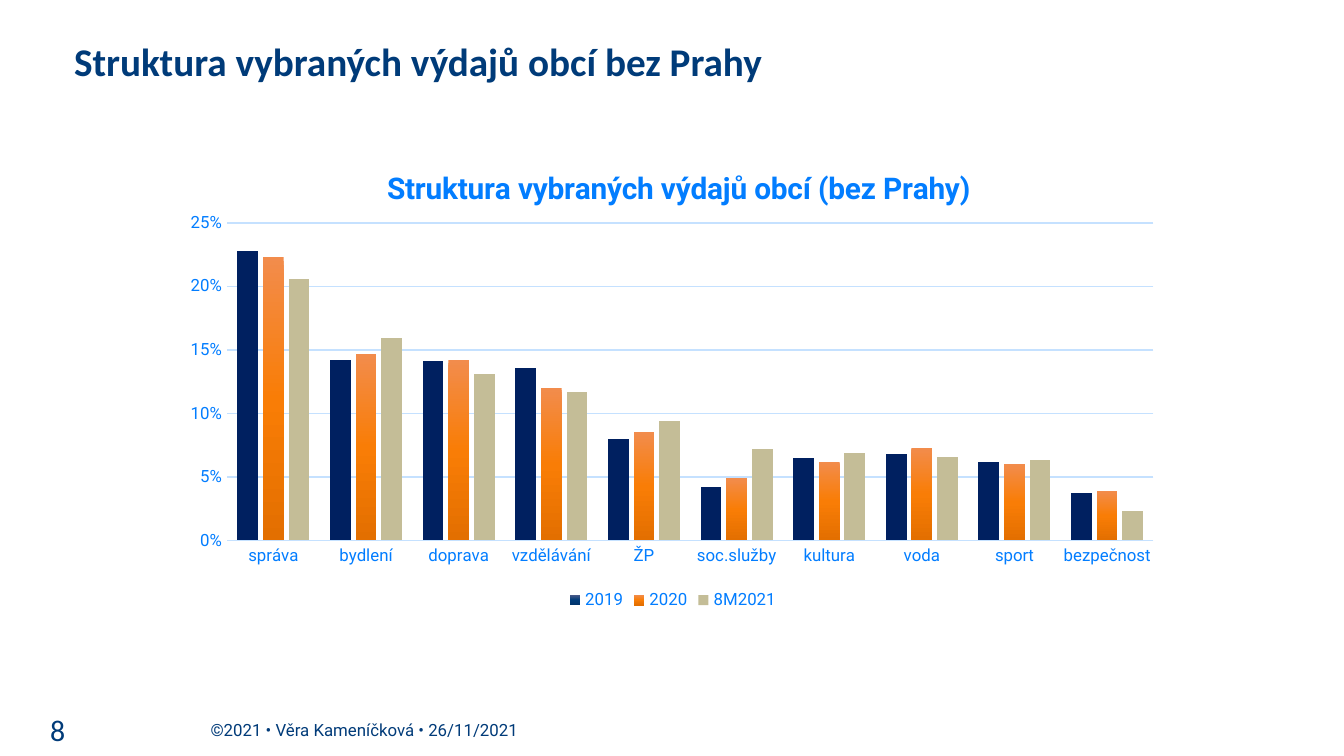
from copy import deepcopy
from dataclasses import dataclass

from pptx import Presentation
from pptx import util as u
from pptx.chart.data import CategoryChartData
from pptx.dml.color import RGBColor
from pptx.enum import chart as charts, text
from pptx.oxml import parse_xml
from pptx.oxml.ns import nsdecls, qn


@dataclass(frozen=True)
class Theme:
    """Colours, fonts and type sizes of the slide."""
    heading: str = "003B79"
    footer: str = "013B79"
    chart_text: str = "027DFF"
    grid: str = "C5E1FF"
    bars_2019: str = "002060"
    fills: tuple = (("4B5B88", "003B79", "00346C"),
                    ("F28C4C", "F97D06", "E36F00"), ("C4BD97",))
    heading_font: str = "Calibri"
    body_font: str = "Roboto"
    heading_size: float = 21
    chart_title_size: float = 16
    number_size: float = 16
    chart_size: float = 10
    small_size: float = 9


@dataclass(frozen=True)
class Box:
    """A rectangle in centimetres."""
    left: float
    top: float
    width: float
    height: float

    def lengths(self):
        """Return the four sides as lengths."""
        return [u.Cm(side) for side in (self.left, self.top, self.width, self.height)]


THEME = Theme()
CATEGORIES = ["správa", "bydlení", "doprava", "vzdělávání", "ŽP",
              "soc.služby", "kultura", "voda", "sport", "bezpečnost"]
SERIES = {
    "2019": [0.228, 0.142, 0.141, 0.136, 0.08, 0.042, 0.065, 0.068, 0.062, 0.037],
    "2020": [0.223, 0.147, 0.142, 0.12, 0.085, 0.049, 0.062, 0.073, 0.06, 0.039],
    "8M2021": [0.206, 0.159, 0.131, 0.117, 0.094, 0.072, 0.069, 0.066, 0.063, 0.023],
}


def set_font(font, name, size, color, bold=False):
    """Apply one type style."""
    font.name, font.size, font.bold = name, u.Pt(size), bold
    font.color.rgb = RGBColor.from_string(color)


def add_title(slide, box, wording):
    """Place the heading in the title placeholder."""
    title = slide.shapes.title
    title.left, title.top, title.width, title.height = box.lengths()
    frame = title.text_frame
    frame.text = wording
    frame.vertical_anchor = text.MSO_ANCHOR.TOP
    frame.auto_size = text.MSO_AUTO_SIZE.NONE
    frame.margin_left = frame.margin_right = u.Cm(0.13)
    frame.margin_top = frame.margin_bottom = u.Cm(0.13)
    paragraph = frame.paragraphs[0]
    paragraph.alignment = text.PP_ALIGN.LEFT
    set_font(paragraph.font, THEME.heading_font, THEME.heading_size, THEME.heading, True)


def add_label(slide, box, wording, font_name, size, alignment):
    """Add one vertically centred footer text."""
    frame = slide.shapes.add_textbox(*box.lengths()).text_frame
    frame.text = wording
    frame.word_wrap = True
    frame.vertical_anchor = text.MSO_ANCHOR.MIDDLE
    paragraph = frame.paragraphs[0]
    paragraph.alignment = alignment
    set_font(paragraph.font, font_name, size, THEME.footer)


def add_footer(slide, box, number, credit):
    """Put the slide number at the left and the credit at the right of the box."""
    number_width, credit_width = 1.68, 8.59
    credit_left = box.left + box.width - credit_width
    add_label(slide, Box(credit_left, box.top, credit_width, box.height), credit,
              THEME.body_font, THEME.small_size, text.PP_ALIGN.LEFT)
    add_label(slide, Box(box.left, box.top, number_width, box.height), number,
              THEME.heading_font, THEME.number_size, text.PP_ALIGN.RIGHT)


def set_layout(parent, index, **settings):
    """Give a chart part a manual layout, as fractions of the chart."""
    previous = parent.find(qn("c:layout"))
    if previous is not None:
        parent.remove(previous)
    items = "".join(f'<c:{name} val="{value}"/>' for name, value in settings.items())
    parent.insert(index, parse_xml(
        f'<c:layout {nsdecls("c")}><c:manualLayout>{items}</c:manualLayout></c:layout>'))


def fill_series(series, colors):
    """Fill a series with one colour or an even downward gradient."""
    fill = series.format.fill
    series.invert_if_negative = False
    if len(colors) == 1:
        fill.solid()
        fill.fore_color.rgb = RGBColor.from_string(colors[0])
        return
    fill.gradient()
    fill.gradient_angle = 270
    stops = series._element.find(".//" + qn("a:gsLst"))
    stops.append(deepcopy(stops[-1]))
    for index, (stop, color) in enumerate(zip(fill.gradient_stops, colors)):
        stop.color.rgb = RGBColor.from_string(color)
        stop.position = index / (len(colors) - 1)


def style_axes(chart):
    """Format both axes and the gridlines."""
    for axis in (chart.category_axis, chart.value_axis):
        axis.major_tick_mark = axis.minor_tick_mark = charts.XL_TICK_MARK.NONE
        set_font(axis.tick_labels.font, THEME.body_font, THEME.small_size, THEME.chart_text)
    values = chart.value_axis
    values.minimum_scale, values.maximum_scale, values.major_unit = 0, 0.25, 0.05
    values.tick_labels.number_format = "0%"
    values.tick_labels.number_format_is_linked = False
    values.format.line.fill.background()
    for line, width in ((chart.category_axis.format.line, 1),
                        (values.major_gridlines.format.line, 0.75)):
        line.color.rgb = RGBColor.from_string(THEME.grid)
        line.width = u.Pt(width)


def add_expense_chart(slide, box, wording):
    """Add the clustered column chart of expenses."""
    data = CategoryChartData(number_format="0.0%")
    data.categories = CATEGORIES
    for name, values in SERIES.items():
        data.add_series(name, values)
    chart = slide.shapes.add_chart(
        charts.XL_CHART_TYPE.COLUMN_CLUSTERED, *box.lengths(), data).chart
    set_font(chart.font, THEME.body_font, THEME.chart_size, THEME.heading)

    chart.has_title = True
    title = chart.chart_title
    title.include_in_layout = False
    title.text_frame.text = wording
    set_font(title.text_frame.paragraphs[0].font, THEME.body_font,
             THEME.chart_title_size, THEME.chart_text, True)
    set_layout(title._element, 1, xMode="edge", yMode="edge", x=0.21, y=0.05)

    chart.has_legend = True
    chart.legend.position = charts.XL_LEGEND_POSITION.BOTTOM
    chart.legend.include_in_layout = False
    set_font(chart.legend.font, THEME.body_font, THEME.small_size, THEME.chart_text)

    style_axes(chart)
    plot = chart.plots[0]
    plot.gap_width, plot.overlap, plot.vary_by_categories = 100, -24, False
    for series, colors in zip(plot.series, THEME.fills):
        fill_series(series, colors)
    for index in range(len(CATEGORIES)):
        fill = plot.series[0].points[index].format.fill
        fill.solid()
        fill.fore_color.rgb = RGBColor.from_string(THEME.bars_2019)
    plot_area = chart._chartSpace.find(".//" + qn("c:plotArea"))
    set_layout(plot_area, 0, layoutTarget="inner", xMode="edge", yMode="edge",
               x=0.056, y=0.175, w=0.923, h=0.668)


def main():
    """Build and save the slide."""
    presentation = Presentation()
    presentation.slide_width, presentation.slide_height = u.Cm(25.4), u.Cm(14.29)
    slide = presentation.slides.add_slide(presentation.slide_layouts[5])
    add_title(slide, Box(1.27, 0.58, 22.86, 1.12), "Struktura vybraných výdajů obcí bez Prahy")
    add_footer(slide, Box(-0.2, 13.41, 12.52, 0.76), "8", "©2021 • Věra Kameníčková • 26/11/2021")
    add_expense_chart(slide, Box(3.23, 2.64, 18.97, 8.99),
                      "Struktura vybraných výdajů obcí (bez Prahy)")
    presentation.save("out.pptx")


if __name__ == "__main__":
    main()
